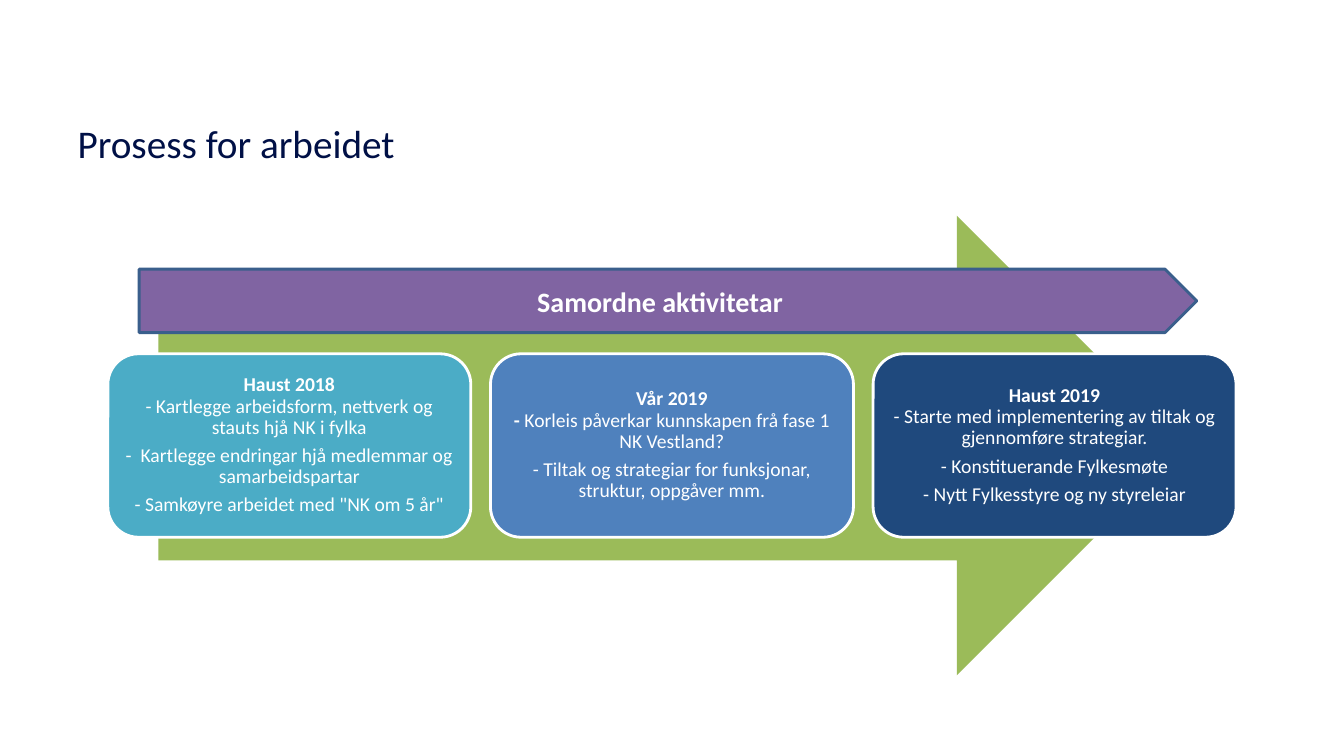
from pptx import Presentation
from pptx.dml.color import RGBColor
from pptx.enum.shapes import MSO_SHAPE
from pptx.enum.text import MSO_ANCHOR, PP_ALIGN
from pptx.util import Inches, Pt

TITLE = "Prosess for arbeidet"
BANNER = "Samordne aktivitetar"
# Heading, fill, whether the first dash is bold, activities
PHASES = [
    ("Haust 2018", "4BACC6", False, [
        "- Kartlegge arbeidsform, nettverk og stauts hjå NK i fylka",
        "-  Kartlegge endringar hjå medlemmar og samarbeidspartar",
        '- Samkøyre arbeidet med "NK om 5 år"']),
    ("Vår 2019", "4F81BD", True, [
        "- Korleis påverkar kunnskapen frå fase 1 NK Vestland?",
        "- Tiltak og strategiar for funksjonar, struktur, oppgåver mm."]),
    ("Haust 2019", "1F497D", False, [
        "- Starte med implementering av tiltak og gjennomføre strategiar.",
        "- Konstituerande Fylkesmøte",
        "- Nytt Fylkesstyre og ny styreleiar"]),
]
THEME = {
    "font": "Calibri", "title": "001046", "text": "FFFFFF",
    "arrow": "9BBB59", "banner": "8064A2", "banner_line": "3A5F8C",
    "card_line": "FFFFFF", "title_size": 28, "banner_size": 20, "card_size": 14,
}
CARD_LEFT, CARD_TOP, CARD_W, CARD_H = 1.07, 3.51, 3.6, 1.82
CARD_STEP = 3.795


def add_run(p, text, size, color, bold=False):
    r = p.add_run()
    r.text = text
    font = {"name": THEME["font"], "size": Pt(size), "bold": bold}
    for key, value in font.items():
        setattr(r.font, key, value)
    r.font.color.rgb = RGBColor.from_string(color)


def add_block(slide, kind, box, fill, line=None):
    sp = slide.shapes.add_shape(kind, *map(Inches, box))
    sp.shadow.inherit = False
    sp.fill.solid()
    sp.fill.fore_color.rgb = RGBColor.from_string(fill)
    if line:
        sp.line.color.rgb = RGBColor.from_string(line)
        sp.line.width = Pt(2)
    else:
        sp.line.fill.background()
    sp.text_frame.vertical_anchor = MSO_ANCHOR.MIDDLE
    return sp


def add_card(slide, index, heading, fill, bold_dash, activities):
    box = (CARD_LEFT + index * CARD_STEP, CARD_TOP, CARD_W, CARD_H)
    sp = add_block(slide, MSO_SHAPE.ROUNDED_RECTANGLE, box, fill, THEME["card_line"])
    tf = sp.text_frame
    tf.word_wrap = True
    for side in ("left", "top", "right", "bottom"):
        setattr(tf, f"margin_{side}", Inches(0.06))
    style = (THEME["card_size"], THEME["text"])
    layout = {"alignment": PP_ALIGN.CENTER, "line_spacing": 0.9, "space_after": Pt(5)}
    for i, activity in enumerate(activities):
        p = tf.add_paragraph() if i else tf.paragraphs[0]
        for key, value in layout.items():
            setattr(p, key, value)
        if i == 0:
            add_run(p, heading, *style, bold=True)
            p.add_line_break()
            if bold_dash:
                add_run(p, activity[:2], *style, bold=True)
                activity = activity[2:]
        add_run(p, activity, *style)


def main():
    prs = Presentation()
    prs.slide_width, prs.slide_height = Inches(13.33), Inches(7.5)
    slide = prs.slides.add_slide(prs.slide_layouts[5])

    title = slide.shapes.title
    title.left, title.top, title.width, title.height = map(Inches, (0.67, 0.8, 12, 1.24))
    title.text_frame.vertical_anchor = MSO_ANCHOR.MIDDLE
    p = title.text_frame.paragraphs[0]
    p.alignment = PP_ALIGN.LEFT
    add_run(p, TITLE, THEME["title_size"], THEME["title"])

    add_block(slide, MSO_SHAPE.RIGHT_ARROW, (1.57, 2.14, 10.2, 4.56), THEME["arrow"])
    for i, phase in enumerate(PHASES):
        add_card(slide, i, *phase)

    banner = add_block(slide, MSO_SHAPE.PENTAGON, (1.38, 2.67, 10.49, 0.63),
                       THEME["banner"], THEME["banner_line"])
    p = banner.text_frame.paragraphs[0]
    p.alignment = PP_ALIGN.CENTER
    add_run(p, BANNER, THEME["banner_size"], THEME["text"], bold=True)

    prs.save("out.pptx")


if __name__ == "__main__":
    main()
